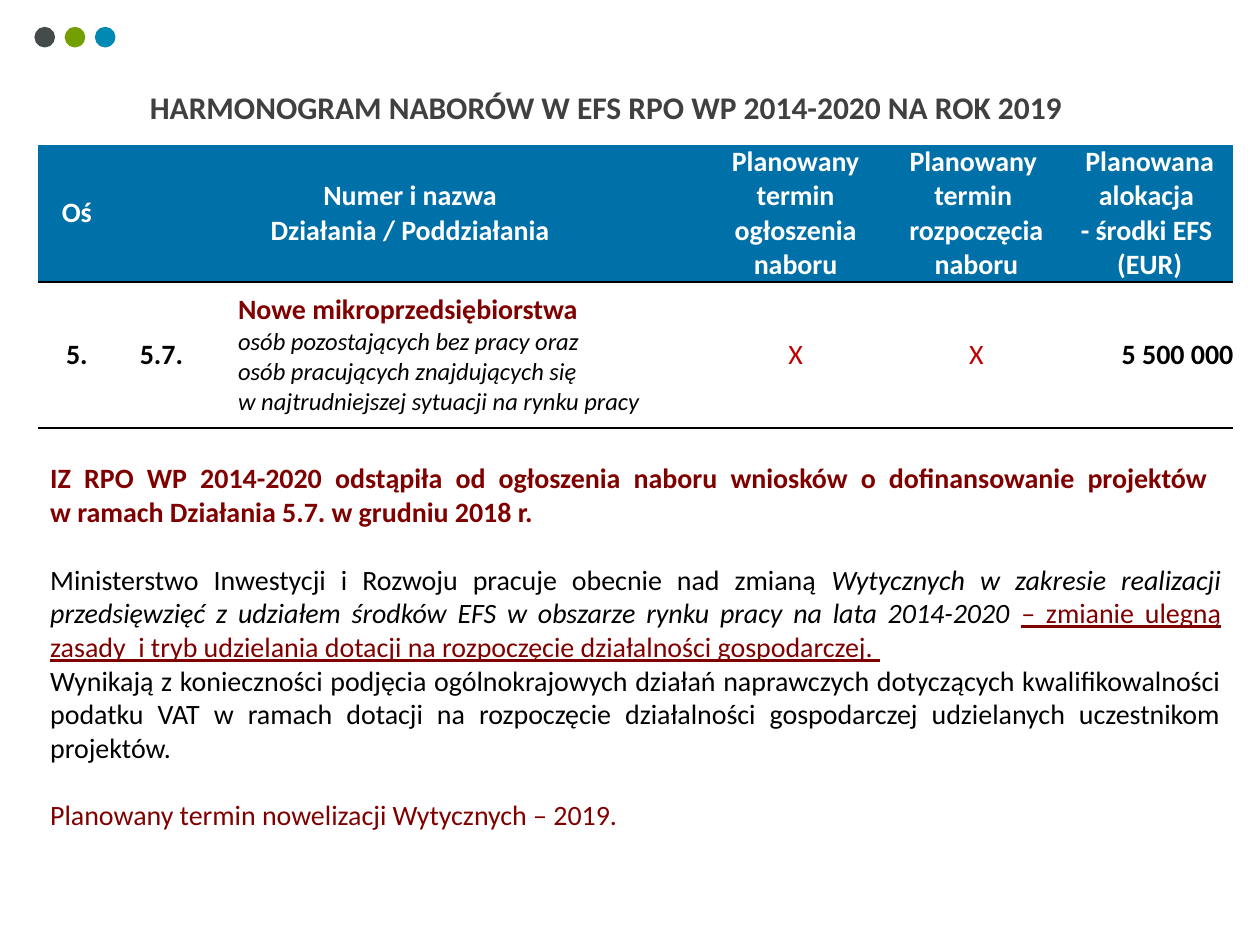
"""Build the slide with the 2019 call schedule."""
import pptx
import pptx.util
import pptx.oxml
import pptx.oxml.ns
import pptx.dml.color
import pptx.enum.shapes
import pptx.enum.text

Inches = pptx.util.Inches
Pt = pptx.util.Pt
Align = pptx.enum.text.PP_ALIGN
Anchor = pptx.enum.text.MSO_ANCHOR

COLORS = {"gray": "454B4B", "green": "73A000", "blue": "0089B3", "header": "0070A8",
          "white": "FFFFFF", "black": "000000", "maroon": "800000", "red": "C00000",
          "title": "404040"}
FONT = "Calibri"
NO_STYLE = "{2D5ABB26-0587-4C30-8999-92F81FD0307C}"
LEFT, WIDTH = 0.3, 9.49

TITLE = "HARMONOGRAM NABORÓW W EFS RPO WP 2014-2020 NA ROK 2019 "
DOTS = ["gray", "green", "blue"]
COLUMNS = [0.62, 0.78, 3.89, 1.45, 1.42, 1.33]
ROWS = [1.08, 1.16]

HEADER = {"color": "white", "bold": True}
BOLD = {"bold": True}
MARK = {"color": "red"}
NOTE = {"size": 14, "italic": True}
ACCENT = {"color": "maroon", "bold": True}

HEADINGS = {
    0: ["Oś"],
    1: ["Numer i nazwa", "Działania / Poddziałania"],
    3: ["Planowany termin ogłoszenia naboru"],
    4: ["Planowany ", "termin ", "rozpoczęcia", "naboru"],
    5: ["Planowana alokacja ", "- środki EFS ", "(EUR)"],
}
ENTRIES = [
    (Align.CENTER, 0, [("5.", BOLD)]),
    (Align.LEFT, 0.19, [("5.7.", BOLD)]),
    (Align.LEFT, 0.19, [("Nowe mikroprzedsiębiorstwa", ACCENT),
                        ("osób pozostających bez pracy oraz", NOTE),
                        ("osób pracujących znajdujących się", NOTE),
                        ("w najtrudniejszej sytuacji na rynku pracy", NOTE)]),
    (Align.CENTER, 0, [("X", MARK)]),
    (Align.CENTER, 0, [("X", MARK)]),
    (Align.RIGHT, 0, [("5 500 000", BOLD)]),
]
BODY = [
    (0, [("IZ RPO WP 2014-2020 odstąpiła od ogłoszenia naboru wniosków o dofinansowanie "
          "projektów \nw ramach Działania 5.7. w grudniu 2018 r. ", ACCENT)]),
    (19.5, [("Ministerstwo Inwestycji i Rozwoju pracuje obecnie nad zmianą ", {}),
            ("Wytycznych w zakresie realizacji przedsięwzięć z udziałem środków EFS "
             "w obszarze rynku pracy na lata 2014-2020 ", {"italic": True}),
            ("– zmianie ulegną zasady  i tryb udzielania dotacji na rozpoczęcie "
             "działalności gospodarczej. ", {"color": "maroon", "underline": True})]),
    (0, [("Wynikają z konieczności podjęcia ogólnokrajowych działań naprawczych dotyczących "
          "kwalifikowalności podatku VAT w ramach dotacji na rozpoczęcie działalności "
          "gospodarczej udzielanych uczestnikom projektów.", {})]),
    (19.5, [("Planowany termin nowelizacji Wytycznych – 2019.", {"color": "maroon"})]),
]


def rgb(name):
    return pptx.dml.color.RGBColor.from_string(COLORS[name])


def add_spans(para, spans):
    for text, style in spans:
        for number, line in enumerate(text.split("\n")):
            if number:
                para.add_line_break()
            span = para.add_run()
            span.text = line
            font = span.font
            font.name = FONT
            font.size = Pt(style.get("size", 16))
            font.color.rgb = rgb(style.get("color", "black"))
            font.bold = style.get("bold", False)
            font.italic = style.get("italic", False)
            font.underline = style.get("underline", False)


def fill_frame(frame, paragraphs, align):
    for number, (gap, spans) in enumerate(paragraphs):
        para = frame.add_paragraph() if number else frame.paragraphs[0]
        para.alignment = align
        para.space_before = Pt(gap)
        add_spans(para, spans)


def fill_cell(cell, lines, align, indent=0):
    cell.margin_left = cell.margin_right = cell.margin_top = cell.margin_bottom = 0
    cell.vertical_anchor = Anchor.MIDDLE
    fill_frame(cell.text_frame, [(0, [line]) for line in lines], align)
    for para in cell.text_frame.paragraphs:
        para._p.get_or_add_pPr().set("marL", str(Inches(indent)))


def add_bottom_line(cell):
    cell._tc.get_or_add_tcPr().insert(0, pptx.oxml.parse_xml(
        f'<a:lnB {pptx.oxml.ns.nsdecls("a")} w="{Pt(1)}"><a:solidFill>'
        f'<a:srgbClr val="{COLORS["black"]}"/></a:solidFill></a:lnB>'))


def add_schedule(page):
    frame = page.shapes.add_table(len(ROWS), len(COLUMNS), Inches(LEFT), Inches(1.15),
                                  Inches(WIDTH), Inches(sum(ROWS)))
    table = frame.table
    table.first_row = table.horz_banding = False
    table._tbl.tblPr.find(pptx.oxml.ns.qn("a:tableStyleId")).text = NO_STYLE
    for column, width in zip(table.columns, COLUMNS):
        column.width = Inches(width)
    for row, height in zip(table.rows, ROWS):
        row.height = Inches(height)
    table.cell(0, 1).merge(table.cell(0, 2))
    for index, lines in HEADINGS.items():
        fill_cell(table.cell(0, index), [(line, HEADER) for line in lines], Align.CENTER)
    for index, (align, indent, lines) in enumerate(ENTRIES):
        fill_cell(table.cell(1, index), lines, align, indent)
        heading, entry = table.cell(0, index), table.cell(1, index)
        heading.fill.solid()
        heading.fill.fore_color.rgb = rgb("header")
        entry.fill.background()
        add_bottom_line(heading)
        add_bottom_line(entry)


def main():
    deck = pptx.Presentation()
    deck.slide_width, deck.slide_height = Inches(10), Inches(7.5)
    page = deck.slides.add_slide(deck.slide_layouts[5])

    title = page.shapes.title
    title.left, title.top = Inches(1.05), Inches(0.65)
    title.width, title.height = Inches(7.58), Inches(0.4)
    frame = title.text_frame
    frame.word_wrap = False
    frame.auto_size = pptx.enum.text.MSO_AUTO_SIZE.NONE
    frame.vertical_anchor = Anchor.TOP
    fill_frame(frame, [(0, [(TITLE, {"size": 18, "color": "title", "bold": True})])],
               Align.CENTER)

    for index, color in enumerate(DOTS):
        dot = page.shapes.add_shape(pptx.enum.shapes.MSO_SHAPE.OVAL,
                                    Inches(0.28 + 0.24 * index), Inches(0.22),
                                    Inches(0.15), Inches(0.15))
        dot.shadow.inherit = False
        dot.fill.solid()
        dot.fill.fore_color.rgb = rgb(color)
        dot.line.color.rgb = rgb(color)
        dot.line.width = Pt(1)

    add_schedule(page)

    box = page.shapes.add_textbox(Inches(LEFT), Inches(3.61), Inches(WIDTH), Inches(3.06))
    box.text_frame.word_wrap = True
    fill_frame(box.text_frame, BODY, Align.JUSTIFY)
    deck.save("out.pptx")


if __name__ == "__main__":
    main()
